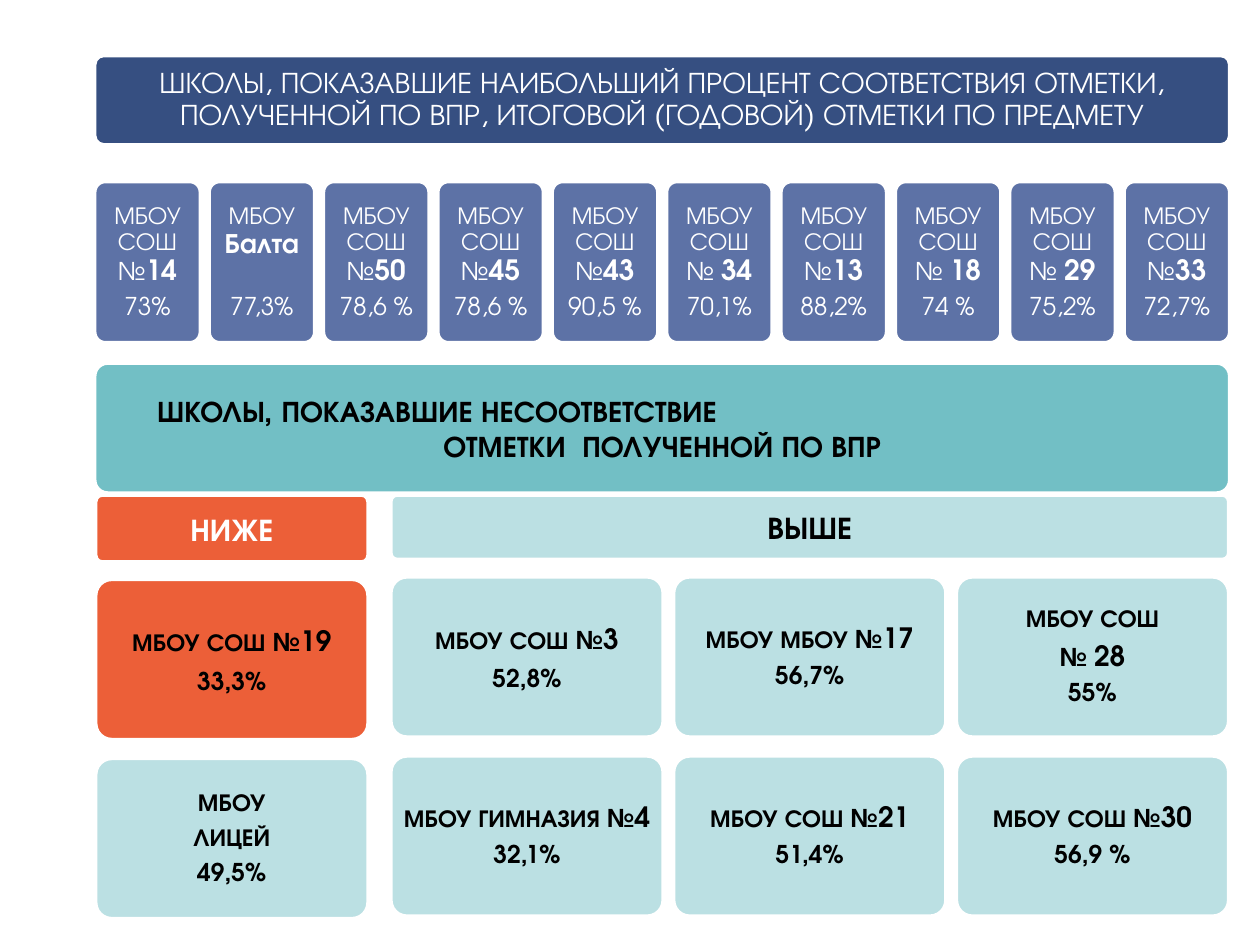
from pptx import Presentation
from pptx.dml.color import RGBColor
from pptx.enum.shapes import MSO_SHAPE
from pptx.enum.text import MSO_ANCHOR, MSO_AUTO_SIZE, PP_ALIGN
from pptx.util import Cm, Pt
from lxml.etree import SubElement

FONT = "TeX Gyre Adventor"
WHITE, BLACK = "FFFFFF", "000000"
NAVY, BLUE, TEAL, PALE, ORANGE = "002060", "3F5795", "72BFC5", "BBE0E3", "EC5F38"


def add_box(x, y, w, h, fill, alpha=100):
    """Add a rounded box in cm; alpha is its opacity in percent."""
    sp = s.shapes.add_shape(MSO_SHAPE.ROUNDED_RECTANGLE, Cm(x), Cm(y), Cm(w), Cm(h))
    sp.adjustments[0] = 0.1
    sp.shadow.inherit = False
    sp.fill.solid()
    sp.fill.fore_color.rgb = RGBColor.from_string(fill)
    sp.line.color.rgb = RGBColor.from_string(WHITE)
    sp.line.width = Pt(2)
    if alpha < 100:
        clr = sp.fill._xPr.solidFill.srgbClr
        SubElement(clr, clr.tag.replace("srgbClr", "alpha"), val=str(alpha * 1000))
    return sp


def add_text(sp, *lines, size=14, color=BLACK, bold=True, spacing=0.9, after=5, inset=0.15):
    """Write one paragraph per line; a (text, number) pair sets the number bold at 16 pt."""
    tf = sp.text_frame
    tf.word_wrap = True
    tf.auto_size = MSO_AUTO_SIZE.NONE
    tf.vertical_anchor = MSO_ANCHOR.MIDDLE
    tf.margin_left = tf.margin_right = tf.margin_top = tf.margin_bottom = Cm(inset)
    for i, line in enumerate(lines):
        p = tf.add_paragraph() if i else tf.paragraphs[0]
        p.alignment = PP_ALIGN.CENTER
        p.line_spacing = spacing
        p.space_before = Pt(0)
        p.space_after = Pt(after)
        for j, text in enumerate([line] if isinstance(line, str) else line):
            r = p.add_run()
            r.text = text
            r.font.name = FONT
            r.font.size = Pt(16 if j else size)
            r.font.bold = bold or j > 0
            r.font.color.rgb = RGBColor.from_string(color)
    return tf


prs = Presentation()
prs.slide_width, prs.slide_height = Cm(25.4), Cm(19.05)
s = prs.slides.add_slide(prs.slide_layouts[5])

LEFT, WIDTH = 1.91, 22.88

# Title bar
add_box(LEFT, 1.12, WIDTH, 1.8, NAVY, alpha=79)
title = s.shapes.title
title.left, title.top, title.width, title.height = Cm(LEFT), Cm(1.12), Cm(WIDTH), Cm(1.8)
# The title follows the bar so that it stays on top of it
s.shapes._spTree.append(title._element)
add_text(title, "ШКОЛЫ, ПОКАЗАВШИЕ НАИБОЛЬШИЙ ПРОЦЕНТ СООТВЕТСТВИЯ ОТМЕТКИ, "
         "ПОЛУЧЕННОЙ ПО ВПР, ИТОГОВОЙ (ГОДОВОЙ) ОТМЕТКИ ПО ПРЕДМЕТУ",
         size=17, color=WHITE, bold=False, after=0, inset=0.18)

# Schools with the highest match
matching = [
    ("МБОУ СОШ №", "14", "73%"),
    ("МБОУ ", "Балта", "77,3%"),
    ("МБОУ СОШ №", "50", "78,6 %"),
    ("МБОУ СОШ №", "45", "78,6 %"),
    ("МБОУ СОШ №", "43", "90,5 %"),
    ("МБОУ СОШ № ", "34", "70,1%"),
    ("МБОУ СОШ №", "13", "88,2%"),
    ("МБОУ СОШ № ", "18", "74 %"),
    ("МБОУ СОШ № ", "29", "75,2%"),
    ("МБОУ СОШ №", "33", "72,7%"),
]
CARD_W = 2.13
step = (WIDTH - CARD_W) / (len(matching) - 1)
for i, (school, number, share) in enumerate(matching):
    card = add_box(LEFT + i * step, 3.66, CARD_W, 3.25, BLUE, alpha=84)
    tf = add_text(card, (school, number), share, color=WHITE, bold=False)
    if number == "Балта":
        tf.paragraphs[0].space_after = Pt(20)

# Mismatch banner
banner = add_box(LEFT, 7.32, WIDTH, 2.62, TEAL)
tf = add_text(banner, "ШКОЛЫ, ПОКАЗАВШИЕ НЕСООТВЕТСТВИЕ", "ОТМЕТКИ  ПОЛУЧЕННОЙ ПО ВПР",
              size=17, spacing=1, after=0, inset=0.18)
tf.paragraphs[0].alignment = PP_ALIGN.LEFT
tf.paragraphs[0]._p.get_or_add_pPr().set("marL", str(Cm(1)))

# Lower and higher groups
LOW_X, HIGH_X, COL_W, COL_STEP = 1.93, 7.88, 5.49, 5.7
ROW_Y, ROW_H, ROW_STEP = 11.63, 3.23, 3.61
for text, x, w, h, fill, color in [
    ("НИЖЕ", LOW_X, COL_W, 1.35, ORANGE, WHITE),
    ("ВЫШЕ", HIGH_X, 2 * COL_STEP + COL_W, 1.3, PALE, BLACK),
]:
    add_text(add_box(x, 9.98, w, h, fill), text, size=18, color=color, spacing=1, inset=0.18)

columns = [
    (LOW_X, 0.05, [(("МБОУ СОШ №", "19"), "33,3%"), ("МБОУ", "ЛИЦЕЙ", "49,5%")]),
    (HIGH_X, 0, [(("МБОУ СОШ №", "3"), "52,8%"), (("МБОУ ГИМНАЗИЯ №", "4"), "32,1%")]),
    (HIGH_X + COL_STEP, 0, [(("МБОУ МБОУ №", "17"), "56,7%"), (("МБОУ СОШ №", "21"), "51,4%")]),
    (HIGH_X + 2 * COL_STEP, 0, [("МБОУ СОШ", ("№ ", "28"), "55%"),
                                (("МБОУ СОШ №", "30"), "56,9 %")]),
]
for col, (x, drop, schools) in enumerate(columns):
    for row, lines in enumerate(schools):
        fill = ORANGE if col == row == 0 else PALE
        card = add_box(x, ROW_Y + drop + row * ROW_STEP, COL_W, ROW_H, fill)
        add_text(card, *lines, spacing=1 if row == 0 and col < 2 else 0.9)

prs.save("out.pptx")
